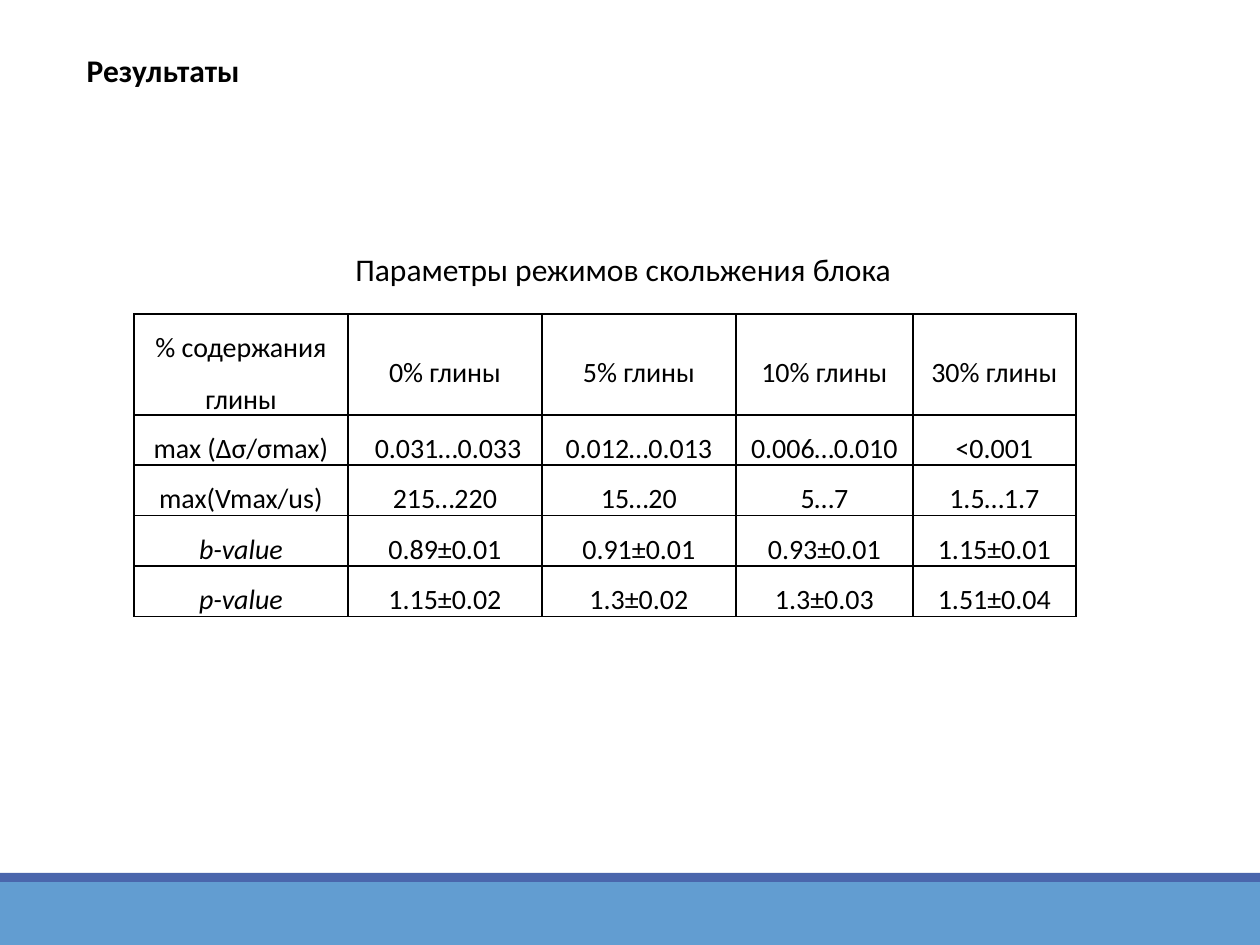
import pptx
import pptx.util
import pptx.dml.color
import pptx.enum.text
import pptx.enum.shapes
import pptx.oxml

# Content
HEADING = "Результаты"
CAPTION = "Параметры режимов скольжения блока"
PARAMETERS = [
    ("% содержания глины", "0% глины", "5% глины", "10% глины", "30% глины"),
    ("max (Δσ/σmax)", " 0.031…0.033", "0.012…0.013", "0.006…0.010", "<0.001"),
    ("max(Vmax/us)", "215…220", "15…20", "5…7", "1.5…1.7"),
    ("b-value", "0.89±0.01", "0.91±0.01", "0.93±0.01", "1.15±0.01"),
    ("p-value", "1.15±0.02", "1.3±0.02", "1.3±0.03", "1.51±0.04"),
]
ITALIC_LABELS = ("b-value", "p-value")

# Layout in px
SCALE = 914400 // 126
WIDTH, HEIGHT = 1260, 945
BANDS = [(882, 63, "629DD1"), (873, 9, "4A66AC")]
COLUMNS = [214, 194, 194, 177, 163]
ROWS = [79] + [39] * 4
BLACK = "000000"
BORDER = (
    '<a:{side} xmlns:a="http://schemas.openxmlformats.org/drawingml/2006/main" w="12700">'
    '<a:solidFill><a:srgbClr val="{color}"/></a:solidFill></a:{side}>'
)


def px(*lengths):
    return [pptx.util.Emu(length * SCALE) for length in lengths]


def rgb(value):
    return pptx.dml.color.RGBColor.from_string(value)


def assign(target, values):
    for name, value in values.items():
        setattr(target, name, value)


def write(frame, text, size, align, spacing=1.0, **style):
    frame.text = text
    paragraph = frame.paragraphs[0]
    assign(paragraph, {"alignment": align, "line_spacing": spacing})
    font = paragraph.runs[0].font
    assign(font, {"name": "Calibri", "size": pptx.util.Pt(size), **style})
    font.color.rgb = rgb(BLACK)


ALIGN = pptx.enum.text.PP_ALIGN
ANCHOR = pptx.enum.text.MSO_ANCHOR

deck = pptx.Presentation()
deck.slide_width, deck.slide_height = px(WIDTH, HEIGHT)
slide = deck.slides.add_slide(deck.slide_layouts[5])

# Footer bands
for top, height, color in BANDS:
    band = slide.shapes.add_shape(
        pptx.enum.shapes.MSO_SHAPE.RECTANGLE, *px(0, top, WIDTH, height))
    band.shadow.inherit = False
    band.fill.solid()
    band.fill.fore_color.rgb = rgb(color)
    band.line.fill.background()

# Parameter table
grid = slide.shapes.add_table(
    len(ROWS), len(COLUMNS), *px(134, 314, sum(COLUMNS), sum(ROWS))).table
for column, width in zip(grid.columns, px(*COLUMNS)):
    column.width = width
for row, height in zip(grid.rows, px(*ROWS)):
    row.height = height

side_margin, no_margin = px(9, 0)
CELL_FORMAT = {
    "margin_left": side_margin, "margin_right": side_margin,
    "margin_top": no_margin, "margin_bottom": no_margin,
    "vertical_anchor": ANCHOR.MIDDLE,
}
for row, values in enumerate(PARAMETERS):
    for column, value in enumerate(values):
        cell = grid.cell(row, column)
        assign(cell, CELL_FORMAT)
        write(cell.text_frame, value, 16, ALIGN.CENTER, 1.5,
              bold=False, italic=value in ITALIC_LABELS)
        properties = cell._tc.get_or_add_tcPr()
        for side in ("lnL", "lnR", "lnT", "lnB"):
            properties.append(pptx.oxml.parse_xml(BORDER.format(side=side, color=BLACK)))
        cell.fill.background()

# Table caption
caption = slide.shapes.add_textbox(*px(343, 244, 635, 89))
caption.text_frame.word_wrap = True
write(caption.text_frame, CAPTION, 18, ALIGN.LEFT)

# Slide heading
heading = slide.shapes.title
assign(heading, dict(zip(("left", "top", "width", "height"), px(74, 45, 180, 50))))
assign(heading.text_frame, {
    "word_wrap": False,
    "vertical_anchor": ANCHOR.TOP,
    "auto_size": pptx.enum.text.MSO_AUTO_SIZE.SHAPE_TO_FIT_TEXT,
})
write(heading.text_frame, HEADING, 18, ALIGN.LEFT, bold=True)

deck.save("out.pptx")
